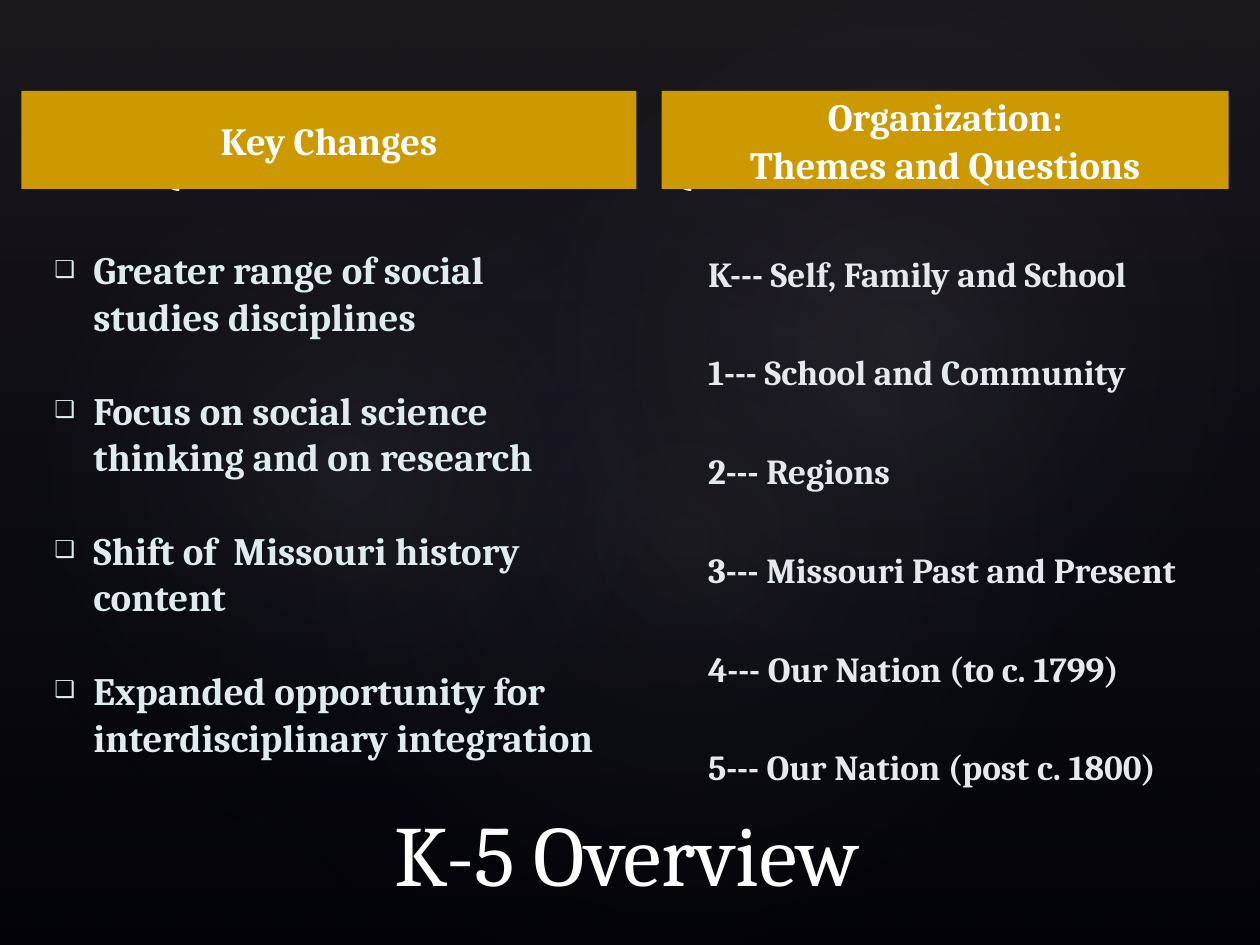
from lxml import etree
from pptx import Presentation
from pptx.dml.color import RGBColor
from pptx.enum.shapes import MSO_SHAPE
from pptx.enum.text import MSO_ANCHOR, MSO_AUTO_SIZE, PP_ALIGN
from pptx.oxml import parse_xml
from pptx.oxml.ns import nsdecls, qn
from pptx.util import Cm, Pt

RECT, OVAL = MSO_SHAPE.RECTANGLE, MSO_SHAPE.OVAL
CENTER, LEFT = PP_ALIGN.CENTER, PP_ALIGN.LEFT
TOP, MIDDLE, BOTTOM = MSO_ANCHOR.TOP, MSO_ANCHOR.MIDDLE, MSO_ANCHOR.BOTTOM
FIXED = MSO_AUTO_SIZE.NONE

FONT = "Cambria"
COLORS = {
    "black": "000000", "white": "FFFFFF", "gold": "CC9900",
    "ice": "DEECEF", "mist": "E5E9EE",
    "plum": "504652", "navy": "242852", "glow": "C4BCC6",
}
LINEAR = '<a:lin ang="5400000" scaled="0"/>'
RADIAL = ('<a:path path="circle"><a:fillToRect l="50000" t="50000" '
          'r="50000" b="50000"/></a:path>')

CHANGES = [
    "Greater range of social studies disciplines",
    "Focus on social science thinking and on research",
    "Shift of  Missouri history content",
    "Expanded opportunity for interdisciplinary integration",
]
THEMES = [
    "K--- Self, Family and School",
    "1--- School and Community",
    "2--- Regions",
    "3--- Missouri Past and Present",
    "4--- Our Nation (to c. 1799)",
    "5--- Our Nation (post c. 1800)",
]


def color(name):
    return RGBColor.from_string(COLORS[name])


def add_glass(page, kind, place, stops, direction, rotation=0):
    """Add a shape with a see-through gradient; stops are (%, colour, opacity %)."""
    shape = page.shapes.add_shape(kind, *map(Cm, place))
    shape.rotation = rotation
    shape.shadow.inherit = False
    shape.line.fill.background()
    marks = "".join(
        f'<a:gs pos="{at * 1000}"><a:srgbClr val="{COLORS[name]}">'
        f'<a:alpha val="{opacity * 1000}"/></a:srgbClr></a:gs>'
        for at, name, opacity in stops)
    shape._element.spPr.find(qn("a:prstGeom")).addnext(parse_xml(
        f'<a:gradFill {nsdecls("a")} rotWithShape="1">'
        f'<a:gsLst>{marks}</a:gsLst>{direction}</a:gradFill>'))


def add_span(para, text, size, name, bold=False):
    span = para.add_run()
    span.text = text
    span.font.name = FONT
    span.font.size = Pt(size)
    span.font.bold = bold
    span.font.color.rgb = color(name)


def set_bullet(para, hang, margin, bullet=None):
    props = para._p.get_or_add_pPr()
    props.set("marL", str(Cm(margin)))
    props.set("indent", str(-Cm(hang)))
    if bullet:
        etree.SubElement(props, qn("a:buSzPct")).set("val", "60000")
        etree.SubElement(props, qn("a:buChar")).set("char", bullet)
    else:
        etree.SubElement(props, qn("a:buNone"))


def add_brace(page, left):
    box = page.shapes.add_textbox(Cm(left), Cm(1.45), Cm(1.27), Cm(2.57))
    frame = box.text_frame
    frame.margin_left = frame.margin_right = 0
    frame.margin_top = frame.margin_bottom = 0
    add_span(frame.paragraphs[0], "{", 60, "white")


def place_holder(page, index, place, anchor):
    """Move a placeholder into place, in front of everything so far."""
    box = next(p for p in page.placeholders if p.placeholder_format.idx == index)
    box.left, box.top, box.width, box.height = map(Cm, place)
    page.shapes._spTree.append(box._element)
    frame = box.text_frame
    frame.word_wrap = True
    frame.auto_size = FIXED
    frame.vertical_anchor = anchor
    return box


def fill_lines(frame, lines, size, name, align, gap, bold=True,
               line_height=None, hang=0, margin=0, bullet=None):
    for number, text in enumerate(lines):
        para = frame.add_paragraph() if number else frame.paragraphs[0]
        set_bullet(para, hang, margin, bullet)
        para.alignment = align
        para.space_before = Pt(gap if number else 0)
        if line_height:
            para.line_spacing = Pt(line_height)
        add_span(para, text, size, name, bold)


def add_heading(page, index, left, width, lines):
    box = place_holder(page, index, (left, 1.83, width, 1.98), MIDDLE)
    box.fill.solid()
    box.fill.fore_color.rgb = color("gold")
    fill_lines(box.text_frame, lines, 22, "white", CENTER, gap=1)


def add_backdrop(page):
    page.background.fill.solid()
    page.background.fill.fore_color.rgb = color("black")
    add_glass(page, RECT, (0, 0, 25.4, 19.05),
              [(0, "plum", 36), (100, "navy", 10)], LINEAR)
    for place, rotation, opacity in [
            ((3.81, 2.9, 20.12, 15.85), 328.7, 7),
            ((-0.76, 3.25, 15.39, 12.45), 294.3, 8),
            ((9.09, 0.33, 18.01, 13.21), 328.7, 8)]:
        add_glass(page, OVAL, place,
                  [(0, "glow", opacity), (58, "navy", 0)], RADIAL, rotation)
    for left in (2.95, 13.28):
        add_brace(page, left)


def main():
    deck = Presentation()
    deck.slide_width, deck.slide_height = Cm(25.4), Cm(19.05)
    page = deck.slides.add_slide(deck.slide_layouts.get_by_name("Comparison"))
    add_backdrop(page)

    # Left column: key changes
    add_heading(page, 1, 0.43, 12.4, ["Key Changes"])
    changes = place_holder(page, 2, (0.84, 4.83, 11.86, 10.06), TOP)
    fill_lines(changes.text_frame, CHANGES, 22.2, "ice", LEFT, gap=26.7,
               line_height=26.7, hang=0.79, margin=0.79, bullet="❑")

    # Right column: themes by grade
    add_heading(page, 3, 13.34, 11.43, ["Organization:", "Themes and Questions"])
    themes = place_holder(page, 4, (13.97, 4.95, 10.59, 11.15), TOP)
    fill_lines(themes.text_frame, THEMES, 20.1, "mist", LEFT, gap=32.2,
               line_height=24.2, margin=0.05)

    # Title at the foot
    title = place_holder(page, 0, (2.16, 15.24, 20.96, 2.97), BOTTOM)
    title.text_frame.margin_bottom = 0
    fill_lines(title.text_frame, ["K-5 Overview"], 49, "white", CENTER,
               gap=0, bold=False)

    deck.save("out.pptx")


if __name__ == "__main__":
    main()
